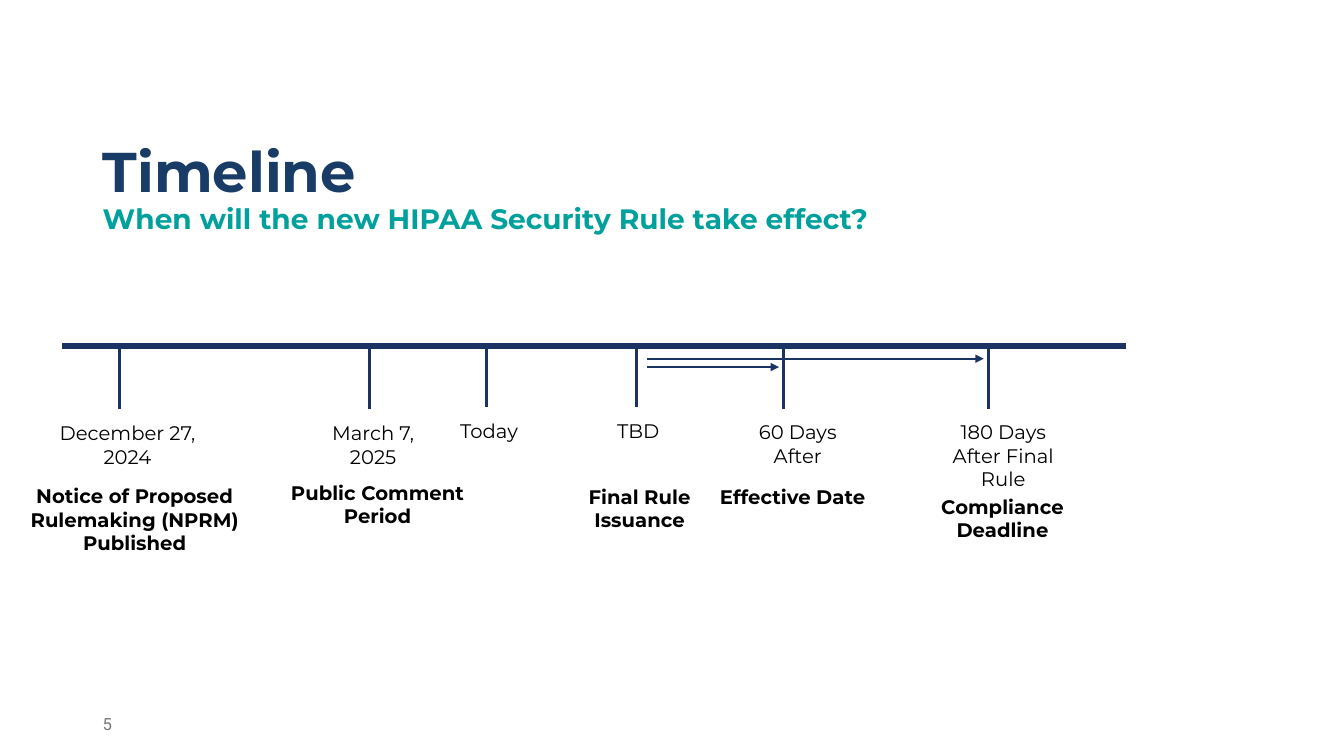
"""Build the HIPAA Security Rule timeline slide."""
from lxml.etree import SubElement
from pptx import Presentation
from pptx.dml.color import RGBColor
from pptx.enum.shapes import MSO_CONNECTOR
from pptx.enum.text import MSO_ANCHOR as ANCHOR, PP_ALIGN as ALIGN
from pptx.oxml.ns import qn
from pptx.util import Cm, Pt

NAVY = "1B3362"
LINE_HEIGHT = 0.6
INSETS = 0.26


def add_text(left, top, width, height, text, size=14, color="000000",
             bold=False, font="Montserrat", align=ALIGN.CENTER, anchor=ANCHOR.TOP):
    box = page.shapes.add_textbox(Cm(left), Cm(top), Cm(width), Cm(height))
    box.text_frame.word_wrap = True
    box.text_frame.vertical_anchor = anchor
    para = box.text_frame.paragraphs[0]
    para.alignment = align
    para.add_run().text = text
    para.font.name = font
    para.font.size = Pt(size)
    para.font.bold = bold
    para.font.color.rgb = RGBColor.from_string(color)
    return para


def add_line(x1, y1, x2, y2, weight, arrow=False):
    line = page.shapes.add_connector(
        MSO_CONNECTOR.STRAIGHT, Cm(x1), Cm(y1), Cm(x2), Cm(y2))
    line.line.color.rgb = RGBColor.from_string(NAVY)
    line.line.width = Pt(weight)
    properties = line._element.spPr
    if arrow:
        SubElement(properties.find(qn("a:ln")), qn("a:tailEnd"), type="triangle")
    SubElement(properties, qn("a:effectLst"))


deck = Presentation()
deck.slide_width, deck.slide_height = Cm(33.87), Cm(19.05)
page = deck.slides.add_slide(deck.slide_layouts[6])

heading = add_text(2.34, 0.41, 22.81, 5.64, "Timeline", size=40, color="193C66",
                   bold=True, align=ALIGN.LEFT, anchor=ANCHOR.BOTTOM)
heading.line_spacing = 0.9
heading.add_line_break()
span = heading.add_run()
span.text = "When will the new HIPAA Security Rule take effect?"
span.font.size = Pt(20)
span.font.color.rgb = RGBColor.from_string("00A19C")

add_text(2.34, 17.73, 7.62, 1.02, "5", size=12, color="797979", font="Roboto",
         align=ALIGN.LEFT, anchor=ANCHOR.MIDDLE)

add_line(1.57, 8.71, 28.37, 8.71, 4.5)
for arrow_y, arrow_end in [(9.04, 24.79), (9.25, 19.63)]:
    add_line(16.31, arrow_y, arrow_end, arrow_y, 1.5, arrow=True)

ticks = [(3.02, 10.31), (9.32, 10.31), (12.27, 10.26),
         (16.03, 10.26), (19.74, 10.31), (24.92, 10.31)]
for tick_x, tick_end in ticks:
    add_line(tick_x, 8.66, tick_x, tick_end, 2.25)

dates = [
    (0.94, 10.49, 4.55, 2, "December 27, 2024"),
    (7.54, 10.49, 3.73, 2, "March 7, 2025"),
    (10.46, 10.44, 3.73, 1, "Today"),
    (14.22, 10.44, 3.73, 1, "TBD"),
    (18.24, 10.46, 3.73, 2, "60 Days After"),
    (23.42, 10.46, 3.73, 3, "180 Days After Final Rule"),
]
milestones = [
    (0.46, 12.07, 5.87, 3, "Notice of Proposed Rulemaking (NPRM) Published"),
    (6.58, 11.99, 5.87, 2, "Public Comment Period"),
    (13.82, 12.09, 4.6, 2, "Final Rule Issuance"),
    (17.04, 12.09, 5.87, 1, "Effective Date"),
    (22.33, 12.34, 5.87, 2, "Compliance Deadline"),
]
for entries, bold in [(dates, False), (milestones, True)]:
    for left, top, width, rows, text in entries:
        add_text(left, top, width, INSETS + rows * LINE_HEIGHT, text, bold=bold)

deck.save("out.pptx")
